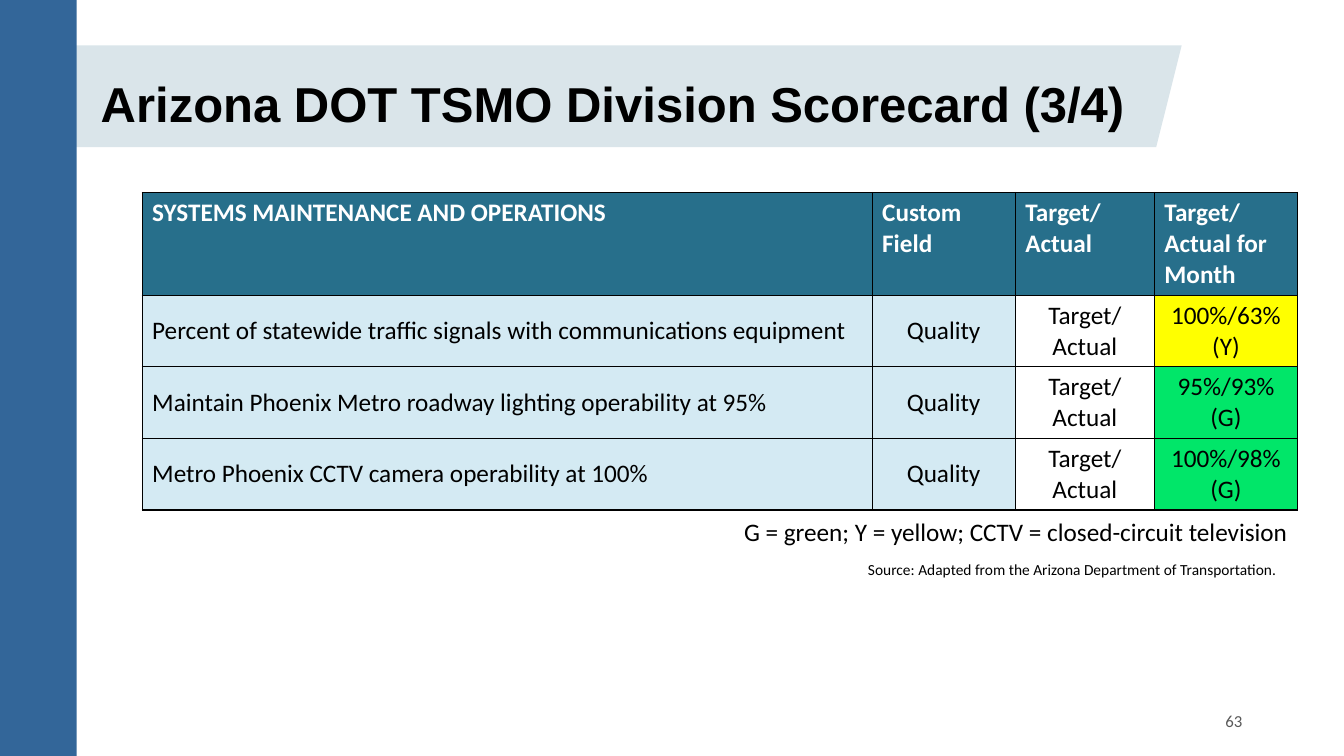
import pptx
import pptx.dml.color
import pptx.enum.shapes
import pptx.enum.text
import pptx.oxml
import pptx.oxml.ns
import pptx.util

Inches = pptx.util.Inches
ALIGN = pptx.enum.text.PP_ALIGN
ANCHOR = pptx.enum.text.MSO_ANCHOR
SHAPE = pptx.enum.shapes.MSO_SHAPE


class Theme:
    black, white, gray = "000000", "FFFFFF", "595959"
    band, side = "DAE5EA", "336699"
    head, pale = "276F8B", "D4EAF3"
    yellow, green = "FFFF00", "01E669"
    title, body, page, source = 35, 18, 12, 11
    sans, text = "Arial", "Calibri"


def color(code):
    return pptx.dml.color.RGBColor.from_string(code)


class Deck:
    def __init__(self, theme):
        self.theme = theme
        self.file = pptx.Presentation()
        self.file.slide_width = Inches(13.33)
        self.file.slide_height = Inches(7.5)
        self.slide = self.file.slides.add_slide(self.file.slide_layouts[6])

    def style(self, para, size, ink=None, name=None, bold=False, align=ALIGN.LEFT):
        para.alignment = align
        form = {"size": pptx.util.Pt(size), "name": name or self.theme.text, "bold": bold}
        for key, value in form.items():
            setattr(para.font, key, value)
        para.font.color.rgb = color(ink or self.theme.black)

    def shape(self, kind, box, fill):
        shape = self.slide.shapes.add_shape(kind, *map(Inches, box))
        shape.shadow.inherit = False
        shape.fill.solid()
        shape.fill.fore_color.rgb = color(fill)
        shape.line.fill.background()

    def label(self, text, box, size, anchor=ANCHOR.TOP, space=1.0, **form):
        frame = self.slide.shapes.add_textbox(*map(Inches, box)).text_frame
        frame.word_wrap = True
        frame.vertical_anchor = anchor
        para = frame.paragraphs[0]
        para.text = text
        para.line_spacing = space
        self.style(para, size, **form)

    def cell(self, cell, text, fill, anchor, **form):
        cell.text = text
        cell.vertical_anchor = anchor
        self.style(cell.text_frame.paragraphs[0], self.theme.body, **form)
        # Borders come before the fill in the cell properties
        props = cell._tc.get_or_add_tcPr()
        for side in "LRTB":
            props.append(pptx.oxml.parse_xml(
                f'<a:ln{side} {pptx.oxml.ns.nsdecls("a")} w="12700"><a:solidFill>'
                f'<a:srgbClr val="{self.theme.black}"/></a:solidFill></a:ln{side}>'))
        cell.fill.solid()
        cell.fill.fore_color.rgb = color(fill)

    def table(self, left, top, widths, heights, head, rows):
        theme = self.theme
        grid = self.slide.shapes.add_table(
            len(heights), len(widths), Inches(left), Inches(top),
            Inches(sum(widths)), Inches(sum(heights))).table
        for col, width in zip(grid.columns, widths):
            col.width = Inches(width)
        for row, height in zip(grid.rows, heights):
            row.height = Inches(height)
        for x, text in enumerate(head):
            self.cell(grid.cell(0, x), text, theme.head, ANCHOR.TOP,
                      ink=theme.white, bold=True)
        for y, (goal, score, mark) in enumerate(rows, 1):
            texts = goal, "Quality", "Target/ Actual", score
            fills = theme.pale, theme.pale, theme.white, mark
            for x, (text, fill) in enumerate(zip(texts, fills)):
                self.cell(grid.cell(y, x), text, fill, ANCHOR.MIDDLE,
                          align=ALIGN.CENTER if x else ALIGN.LEFT)


def main():
    theme = Theme()
    deck = Deck(theme)

    # Title band and side bar
    deck.shape(SHAPE.PARALLELOGRAM, (0.24, 0.45, 11.48, 1.01), theme.band)
    deck.shape(SHAPE.RECTANGLE, (0, 0, 0.76, 7.5), theme.side)
    deck.label("Arizona DOT TSMO Division Scorecard (3/4)", (0.9, 0.75, 10.42, 0.96),
               theme.title, space=0.9, name=theme.sans, bold=True)

    # Scorecard
    head = ("SYSTEMS MAINTENANCE AND OPERATIONS", "Custom Field",
            "Target/ Actual", "Target/ Actual for Month")
    rows = (
        ("Percent of statewide traffic signals with communications equipment",
         "100%/63% (Y)", theme.yellow),
        ("Maintain Phoenix Metro roadway lighting operability at 95%",
         "95%/93% (G)", theme.green),
        ("Metro Phoenix CCTV camera operability at 100%",
         "100%/98% (G)", theme.green),
    )
    deck.table(1.41, 1.91, (7.24, 1.42, 1.38, 1.42), (1.02, 0.71, 0.71, 0.71), head, rows)

    # Key, source and page number
    deck.label("G = green; Y = yellow; CCTV = closed-circuit television",
               (7.01, 5.07, 5.86, 0.4), theme.body, align=ALIGN.RIGHT)
    deck.label("Source: Adapted from the Arizona Department of Transportation.",
               (8.07, 5.51, 4.69, 0.29), theme.source, align=ALIGN.RIGHT)
    deck.label("63", (9.42, 6.95, 3, 0.4), theme.page, anchor=ANCHOR.MIDDLE,
               ink=theme.gray, align=ALIGN.RIGHT)

    deck.file.save("out.pptx")


if __name__ == "__main__":
    main()
